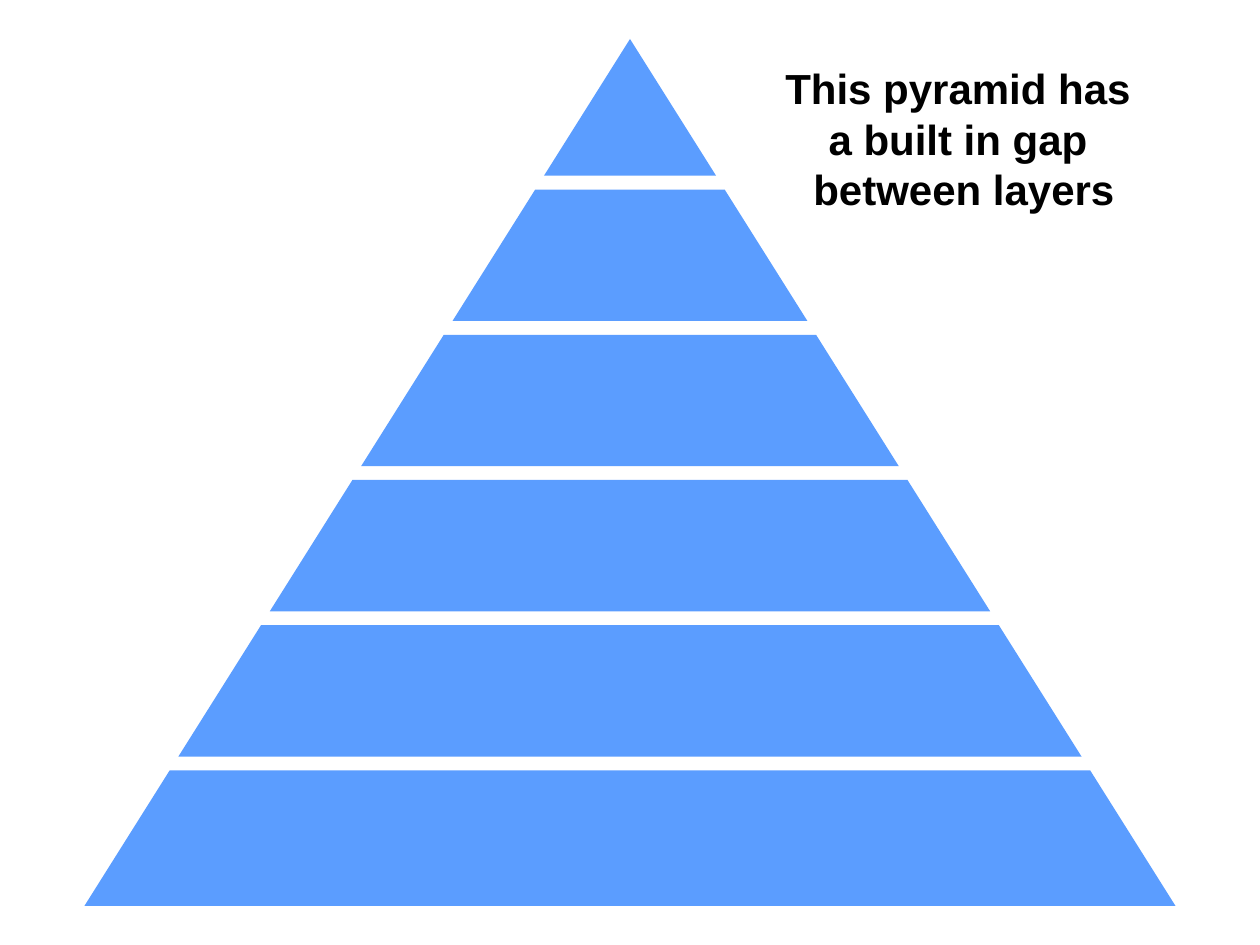
"""Build a slide with a six-layer pyramid whose layers are parted by gaps."""
from pptx import Presentation
from pptx.dml.color import RGBColor as Rgb
from pptx.enum.text import MSO_AUTO_SIZE as AutoSize, PP_ALIGN as Align
from pptx.util import Inches, Pt

COLORS = {"layer": "5B9DFF", "caption": "000000"}
WIDTH, HEIGHT = 10, 7.5
CENTER = WIDTH / 2
APEX, BASE = 0.31, 7.19
HALF_BASE = 4.33
FIRST_GAP, LAST_GAP = 1.45, 6.06
GAP = 0.11
LAYERS = 6
CAPTION = "This pyramid has \va built in gap \vbetween layers"
CAPTION_FONT = {"name": "Arial", "size": Pt(24), "bold": True}


def half_width(y):
    return HALF_BASE * (y - APEX) / (BASE - APEX)


def layer_bounds():
    pitch = (LAST_GAP - FIRST_GAP) / (LAYERS - 2)
    gaps = [FIRST_GAP + pitch * i for i in range(LAYERS - 1)]
    tops = [APEX] + [y + GAP / 2 for y in gaps]
    bottoms = [y - GAP / 2 for y in gaps] + [BASE]
    return zip(tops, bottoms)


def add_layer(slide, top, bottom):
    upper, lower = half_width(top), half_width(bottom)
    corners = [(CENTER + lower, bottom), (CENTER + upper, top)]
    if upper:
        corners.append((CENTER - upper, top))
    outline = slide.shapes.build_freeform(
        Inches(CENTER - lower), Inches(bottom))
    outline.add_line_segments([(Inches(x), Inches(y)) for x, y in corners])
    layer = outline.convert_to_shape()
    layer.shadow.inherit = False
    layer.fill.solid()
    layer.fill.fore_color.rgb = Rgb.from_string(COLORS["layer"])
    layer.line.fill.background()


def add_caption(slide, text, left, top, width, height):
    caption = slide.shapes.add_textbox(
        Inches(left * WIDTH), Inches(top * HEIGHT),
        Inches(width * WIDTH), Inches(height * HEIGHT))
    frame = caption.text_frame
    frame.word_wrap = True
    frame.auto_size = AutoSize.SHAPE_TO_FIT_TEXT
    paragraph = frame.paragraphs[0]
    paragraph.text = text
    paragraph.alignment = Align.CENTER
    for run in paragraph.runs:
        for key, value in CAPTION_FONT.items():
            setattr(run.font, key, value)
        run.font.color.rgb = Rgb.from_string(COLORS["caption"])


def main():
    deck = Presentation()
    deck.slide_width, deck.slide_height = Inches(WIDTH), Inches(HEIGHT)
    slide = deck.slides.add_slide(deck.slide_layouts[6])
    for top, bottom in layer_bounds():
        add_layer(slide, top, bottom)
    add_caption(slide, CAPTION, 0.59, 0.06, 0.35, 0.17)
    deck.save("out.pptx")


if __name__ == "__main__":
    main()
